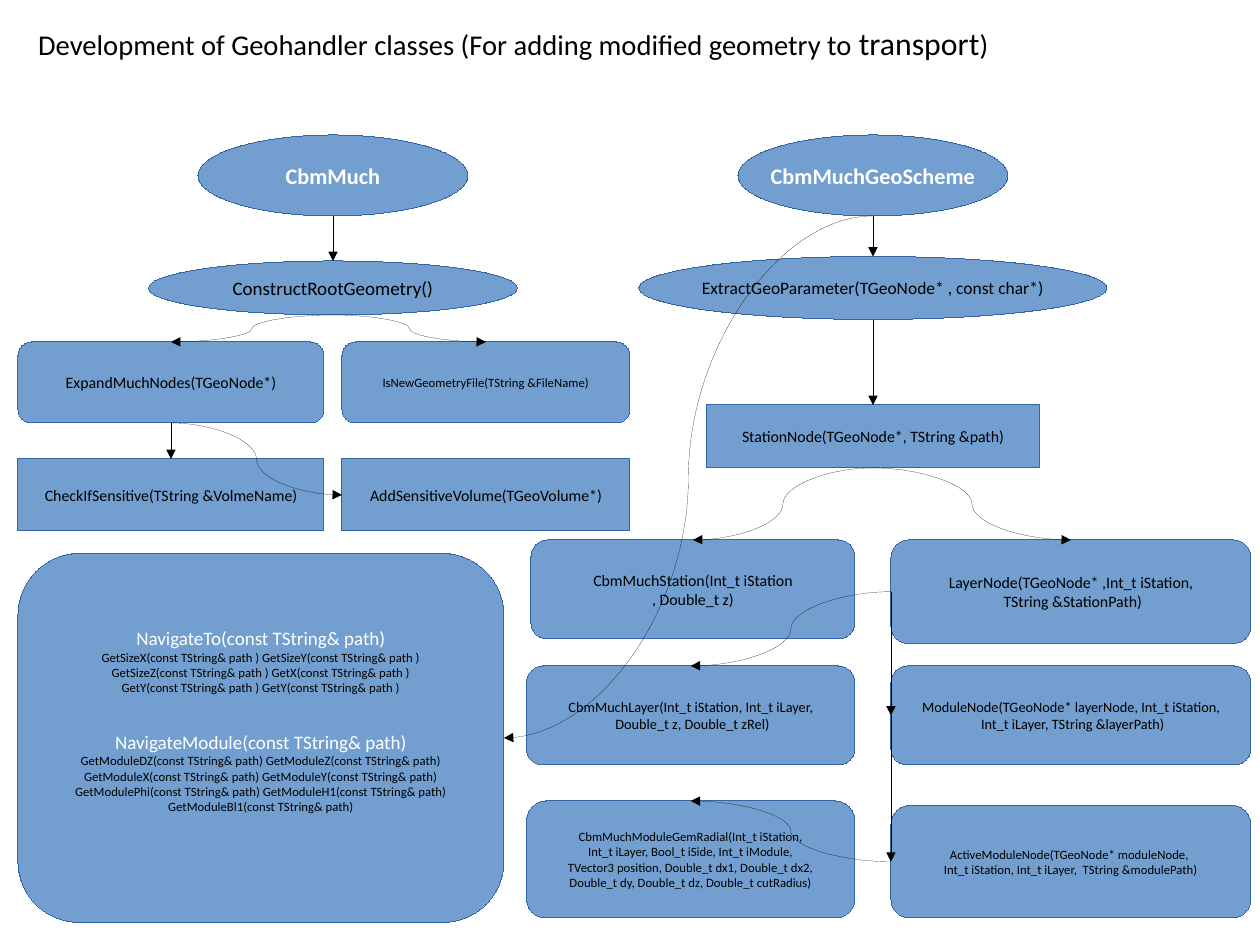
from lxml.etree import SubElement
from pptx import Presentation
from pptx.dml.color import RGBColor
from pptx.enum.shapes import MSO_CONNECTOR as LINK, MSO_SHAPE as SHAPE
from pptx.enum.text import MSO_ANCHOR as ANCHOR, PP_ALIGN as ALIGN
from pptx.oxml.ns import qn
from pptx.util import Pt

PX = 36000  # one px of the layout grid is a millimetre
PAGE_WIDTH, PAGE_HEIGHT = 280, 210
FONT = "Calibri"
BLUE = RGBColor(0x72, 0x9F, 0xCF)
EDGE = RGBColor(0x34, 0x65, 0xA4)
BLACK = RGBColor(0, 0, 0)
WHITE = RGBColor(255, 255, 255)
GAP = 22  # points of space before the second group and below the last

# Content
TITLE = [("Development of Geohandler classes (For adding modified geometry to ", 18),
         ("transport", 20), (")", 18)]

# name: (shape, (left, top, width, height), text size, lines)
BOXES = {
    "much": (SHAPE.OVAL, (44, 30, 60, 18), 14, ["CbmMuch"]),
    "scheme": (SHAPE.OVAL, (164, 30, 60, 18), 14, ["CbmMuchGeoScheme"]),
    "construct": (SHAPE.OVAL, (33, 58, 82, 12), 12, ["ConstructRootGeometry()"]),
    "is new": (SHAPE.ROUNDED_RECTANGLE, (76, 76, 64, 18), 8,
               ["IsNewGeometryFile(TString &FileName)"]),
    "expand": (SHAPE.ROUNDED_RECTANGLE, (4, 76, 68, 18), 10,
               ["ExpandMuchNodes(TGeoNode*)"]),
    "check": (SHAPE.RECTANGLE, (4, 102, 68, 16), 10,
              ["CheckIfSensitive(TString &VolmeName)"]),
    "add": (SHAPE.RECTANGLE, (76, 102, 64, 16), 10,
            ["AddSensitiveVolume(TGeoVolume*)"]),
    "extract": (SHAPE.OVAL, (142, 57, 104, 14), 11,
                ["ExtractGeoParameter(TGeoNode* , const char*)"]),
    "station node": (SHAPE.RECTANGLE, (157, 90, 74, 14), 10,
                     ["StationNode(TGeoNode*, TString &path)"]),
    "station": (SHAPE.ROUNDED_RECTANGLE, (118, 120, 72, 22), 10,
                ["CbmMuchStation(Int_t iStation", ", Double_t z)"]),
    "layer node": (SHAPE.ROUNDED_RECTANGLE, (198, 120, 80, 23), 10,
                   ["LayerNode(TGeoNode* ,Int_t iStation,", " TString &StationPath)"]),
    "layer": (SHAPE.ROUNDED_RECTANGLE, (117, 148, 73, 22), 9,
              ["CbmMuchLayer(Int_t iStation, Int_t iLayer,", " Double_t z, Double_t zRel)"]),
    "module node": (SHAPE.ROUNDED_RECTANGLE, (198, 148, 80, 22), 9,
                    ["ModuleNode(TGeoNode* layerNode, Int_t iStation,",
                     " Int_t iLayer, TString &layerPath)"]),
    "active node": (SHAPE.ROUNDED_RECTANGLE, (198, 179, 80, 25), 8,
                    ["ActiveModuleNode(TGeoNode* moduleNode, ",
                     "Int_t iStation, Int_t iLayer,  TString &modulePath)"]),
    "gem": (SHAPE.ROUNDED_RECTANGLE, (117, 178, 73, 26), 8,
            ["CbmMuchModuleGemRadial(Int_t iStation,",
             " Int_t iLayer, Bool_t iSide, Int_t iModule, ",
             "TVector3 position, Double_t dx1, Double_t dx2,",
             "Double_t dy, Double_t dz, Double_t cutRadius)"]),
    "navigate": (SHAPE.ROUNDED_RECTANGLE, (4, 123, 108, 82), 8,
                 ["NavigateTo(const TString& path)",
                  "GetSizeX(const TString& path ) GetSizeY(const TString& path )",
                  "GetSizeZ(const TString& path ) GetX(const TString& path )",
                  "GetY(const TString& path ) GetY(const TString& path )",
                  "NavigateModule(const TString& path)",
                  "GetModuleDZ(const TString& path) GetModuleZ(const TString& path)",
                  "GetModuleX(const TString& path) GetModuleY(const TString& path)",
                  "GetModulePhi(const TString& path) GetModuleH1(const TString& path)",
                  "GetModuleBl1(const TString& path)"]),
}
CLASSES = ("much", "scheme")

# (from box, side, to box, side)
STRAIGHT_LINKS = [
    ("much", "bottom", "construct", "top"),
    ("scheme", "bottom", "extract", "top"),
    ("extract", "bottom", "station node", "top"),
]
CURVED_LINKS = [
    ("layer node", "left", "layer", "top"),
    ("active node", "left", "gem", "top"),
    ("layer node", "left", "module node", "left"),
    ("module node", "left", "active node", "left"),
    ("station node", "bottom", "layer node", "top"),
    ("station node", "bottom", "station", "top"),
    ("expand", "bottom", "add", "left"),
    ("construct", "bottom", "is new", "top"),
    ("construct", "bottom", "expand", "top"),
    ("expand", "bottom", "check", "top"),
    ("scheme", "bottom", "navigate", "right"),
]
SIDES = {"top": (0.5, 0), "bottom": (0.5, 1), "left": (0, 0.5), "right": (1, 0.5)}


def scaled(lengths):
    return [round(length * PX) for length in lengths]


def style_span(span, size, color=BLACK, bold=False):
    span.font.name, span.font.size = FONT, Pt(size)
    span.font.color.rgb, span.font.bold = color, bold


def drop_theme_style(shape):
    shape._element.remove(shape._element.find(qn("p:style")))


def add_box(page, name):
    kind, place, size, lines = BOXES[name]
    box = page.shapes.add_shape(kind, *scaled(place))
    drop_theme_style(box)
    box.shadow.inherit = False
    box.fill.solid()
    box.fill.fore_color.rgb = BLUE
    box.line.color.rgb = EDGE
    frame = box.text_frame
    frame.word_wrap = False
    frame.vertical_anchor = ANCHOR.MIDDLE
    frame.text = "\n".join(lines)
    for para in frame.paragraphs:
        para.alignment = ALIGN.CENTER
        heading = para.text.startswith("Navigate")
        white = heading or name in CLASSES
        style_span(para.runs[0], 12 if heading else size,
                   WHITE if white else BLACK, name in CLASSES)
    if name == "navigate":
        frame.paragraphs[4].space_before = Pt(GAP)
        frame.margin_bottom += Pt(GAP)


def anchor_point(name, side):
    left, top, width, height = BOXES[name][1]
    across, down = SIDES[side]
    return left + across * width, top + down * height


def add_arrow(page, kind, start, start_side, end, end_side):
    points = anchor_point(start, start_side) + anchor_point(end, end_side)
    arrow = page.shapes.add_connector(kind, *scaled(points))
    drop_theme_style(arrow)
    arrow.line.color.rgb = BLACK
    SubElement(arrow.line._get_or_add_ln(), qn("a:tailEnd"), type="triangle")
    SubElement(arrow._element.spPr, qn("a:effectLst"))


def main():
    deck = Presentation()
    deck.slide_width = PAGE_WIDTH * PX
    deck.slide_height = PAGE_HEIGHT * PX
    page = deck.slides.add_slide(deck.slide_layouts[6])

    # Classes and methods
    for name in BOXES:
        add_box(page, name)

    # Calls between them
    for kind, links in ((LINK.STRAIGHT, STRAIGHT_LINKS), (LINK.CURVE, CURVED_LINKS)):
        for link in links:
            add_arrow(page, kind, *link)

    # Title
    title = page.shapes.add_textbox(*scaled((6, 4, 272, 29)))
    title.text_frame.word_wrap = True
    for words, size in TITLE:
        span = title.text_frame.paragraphs[0].add_run()
        span.text = words
        style_span(span, size)

    deck.save("out.pptx")


if __name__ == "__main__":
    main()
